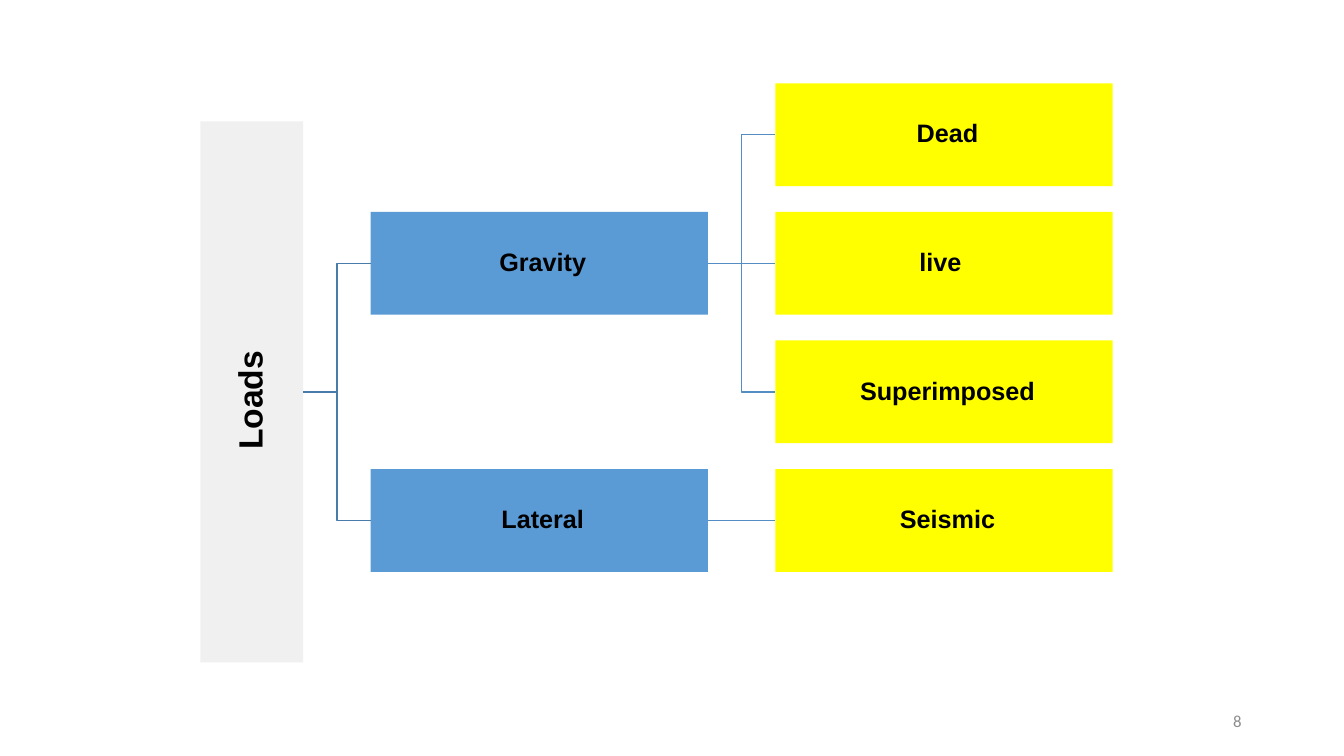
from lxml import etree
from pptx import Presentation
from pptx.dml.color import RGBColor
from pptx.enum.shapes import MSO_CONNECTOR, MSO_SHAPE
from pptx.enum.text import MSO_ANCHOR, PP_ALIGN
from pptx.oxml.ns import qn
from pptx.util import Cm, Pt

GREY = RGBColor(0xF1, 0xF0, 0xF0)
BLUE = RGBColor(0x5B, 0x9B, 0xD5)
YELLOW = RGBColor(0xFF, 0xFF, 0x00)
BLACK = RGBColor(0x00, 0x00, 0x00)
NUMBER_GREY = RGBColor(0x8C, 0x8C, 0x8C)
TRUNK_LINE = RGBColor(0x49, 0x7C, 0xAB)
BRANCH_LINE = RGBColor(0x53, 0x8D, 0xC1)

ROOT = "Loads"
BRANCHES = [
    ("Gravity ", 1, [("Dead ", 0), (" live", 1), ("Superimposed ", 2)]),
    ("Lateral ", 3, [("Seismic ", 3)]),
]
PAGE_NUMBER = "8"

BOX_W, BOX_H = 8.5, 2.59
ROW_TOP, ROW_STEP = 2.1, 3.24
ROOT_X, ROOT_H = 5.05, 13.63
GAP = 1.7
BRANCH_X = ROOT_X + BOX_H + GAP
LEAF_X = BRANCH_X + BOX_W + GAP
LEFT_SITE, RIGHT_SITE = 1, 3


def row_y(row):
    return ROW_TOP + row * ROW_STEP


def write(tf, text, size, color, align, font="Arial", bold=True):
    tf.word_wrap = True
    tf.vertical_anchor = MSO_ANCHOR.MIDDLE
    p = tf.paragraphs[0]
    p.alignment = align
    r = p.add_run()
    r.text = text
    r.font.name = font
    r.font.size = Pt(size)
    r.font.bold = bold
    r.font.color.rgb = color
    return p


def add_box(s, text, x, y, w, h, fill, size):
    sp = s.shapes.add_shape(MSO_SHAPE.RECTANGLE, Cm(x), Cm(y), Cm(w), Cm(h))
    sp.shadow.inherit = False
    sp.fill.solid()
    sp.fill.fore_color.rgb = fill
    sp.line.fill.background()
    tf = sp.text_frame
    tf.margin_left = tf.margin_right = tf.margin_top = tf.margin_bottom = Cm(0.03)
    p = write(tf, text, size, BLACK, PP_ALIGN.CENTER)
    p.line_spacing = 0.9
    return sp, p


def add_node(s, text, x, row, fill):
    sp, p = add_box(s, text, x, row_y(row), BOX_W, BOX_H, fill, 18)
    p._p.get_or_add_pPr().set("rtl", "1")
    return sp


def join(s, start, end, color, straight=False):
    kind = MSO_CONNECTOR.STRAIGHT if straight else MSO_CONNECTOR.ELBOW
    cx = s.shapes.add_connector(kind, 0, 0, 0, 0)
    cx.begin_connect(start, RIGHT_SITE)
    cx.end_connect(end, LEFT_SITE)
    cx.line.color.rgb = color
    cx.line.width = Pt(1)
    etree.SubElement(cx._element.spPr, qn("a:effectLst"))


def main():
    prs = Presentation()
    prs.slide_width, prs.slide_height = Cm(33.87), Cm(19.05)
    s = prs.slides.add_slide(prs.slide_layouts[6])

    root_y = row_y(2) + (BOX_H - ROOT_H) / 2
    root, p = add_box(s, ROOT, ROOT_X, root_y, BOX_H, ROOT_H, GREY, 24)
    root.text_frame.margin_top = Cm(0.46)
    root.text_frame._txBody.bodyPr.set("vert", "vert270")

    for name, row, leaves in BRANCHES:
        branch = add_node(s, name, BRANCH_X, row, BLUE)
        join(s, root, branch, TRUNK_LINE)
        for leaf_name, leaf_row in leaves:
            leaf = add_node(s, leaf_name, LEAF_X, leaf_row, YELLOW)
            join(s, branch, leaf, BRANCH_LINE, leaf_row == row)

    tb = s.shapes.add_textbox(Cm(23.92), Cm(17.66), Cm(7.62), Cm(1.01))
    write(tb.text_frame, PAGE_NUMBER, 12, NUMBER_GREY, PP_ALIGN.RIGHT, "Calibri", False)

    prs.save("out.pptx")


if __name__ == "__main__":
    main()
